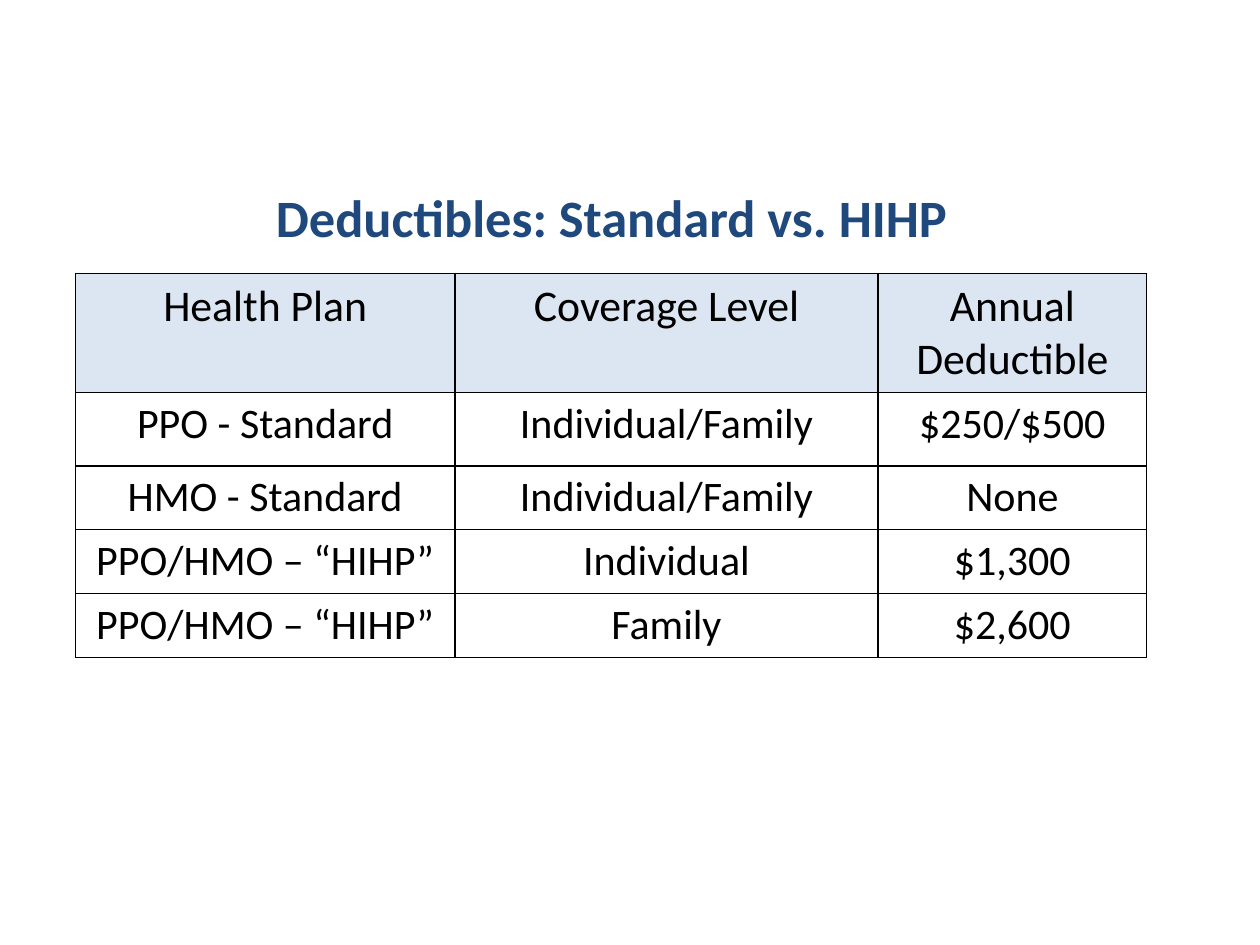
from lxml import etree
from pptx import Presentation
from pptx import util as u
from pptx.dml.color import RGBColor
from pptx.enum import text
from pptx.oxml.ns import qn

COLORS = {"title": "1F497D", "ink": "000000", "header": "DCE6F2", "border": "000000"}
COLUMNS, ROWS = 100, 75

COLUMN_WIDTHS = [30.1, 33.6, 21.3]
ROW_HEIGHTS = [9.2, 5.8, 4.8, 5, 5]
DEDUCTIBLES = [
    ["Health Plan", "Coverage Level", "Annual Deductible"],
    ["PPO - Standard", "Individual/Family", "$250/$500"],
    ["HMO - Standard", "Individual/Family", "None"],
    ["PPO/HMO – “HIHP”", "Individual", "$1,300"],
    ["PPO/HMO – “HIHP”", "Family", "$2,600"],
]


def write(frame, words, size, color="ink", bold=False, font="Calibri"):
    """Put one centred paragraph in a text frame."""
    frame.word_wrap = True
    para = frame.paragraphs[0]
    para.alignment = text.PP_ALIGN.CENTER
    span = para.add_run()
    span.text = words
    span.font.name = font
    span.font.size = u.Pt(size)
    span.font.bold = bold
    span.font.color.rgb = RGBColor.from_string(COLORS[color])


def outline(cell, width=1):
    """Draw all four cell borders; call before the fill is set."""
    properties = cell._tc.get_or_add_tcPr()
    for side in ("lnL", "lnR", "lnT", "lnB"):
        line = etree.SubElement(properties, qn(f"a:{side}"), w=str(u.Pt(width)))
        fill = etree.SubElement(line, qn("a:solidFill"))
        etree.SubElement(fill, qn("a:srgbClr"), val=COLORS["border"])


class Page:
    """A slide measured in grid columns and rows."""

    def __init__(self, deck):
        self.slide = deck.slides.add_slide(deck.slide_layouts[6])
        self.column = deck.slide_width / COLUMNS
        self.row = deck.slide_height / ROWS

    def x(self, columns):
        return round(columns * self.column)

    def y(self, rows):
        return round(rows * self.row)

    def area(self, left, top, width, height):
        return self.x(left), self.y(top), self.x(width), self.y(height)

    def title(self, words, *place):
        box = self.slide.shapes.add_textbox(*self.area(*place))
        write(box.text_frame, words, 30, color="title", bold=True)
        box.text_frame.auto_size = text.MSO_AUTO_SIZE.SHAPE_TO_FIT_TEXT

    def table(self, values, left, top, widths, heights):
        place = self.area(left, top, sum(widths), sum(heights))
        table = self.slide.shapes.add_table(len(heights), len(widths), *place).table
        table.horz_banding = False
        for column, width in zip(table.columns, widths):
            column.width = self.x(width)
        for index, (row, height) in enumerate(zip(table.rows, heights)):
            row.height = self.y(height)
            is_header = index == 0
            for cell, words in zip(row.cells, values[index]):
                write(cell.text_frame, words, 25 if is_header else 24)
                outline(cell)
                if is_header:
                    cell.fill.solid()
                    cell.fill.fore_color.rgb = RGBColor.from_string(COLORS["header"])
                else:
                    cell.fill.background()


def main():
    deck = Presentation()
    deck.slide_width, deck.slide_height = u.Inches(10), u.Inches(7.5)
    page = Page(deck)
    page.table(DEDUCTIBLES, 6, 21.7, COLUMN_WIDTHS, ROW_HEIGHTS)
    page.title("Deductibles: Standard vs. HIHP", 4.2, 14.2, 88.7, 6.1)
    deck.save("out.pptx")


if __name__ == "__main__":
    main()
